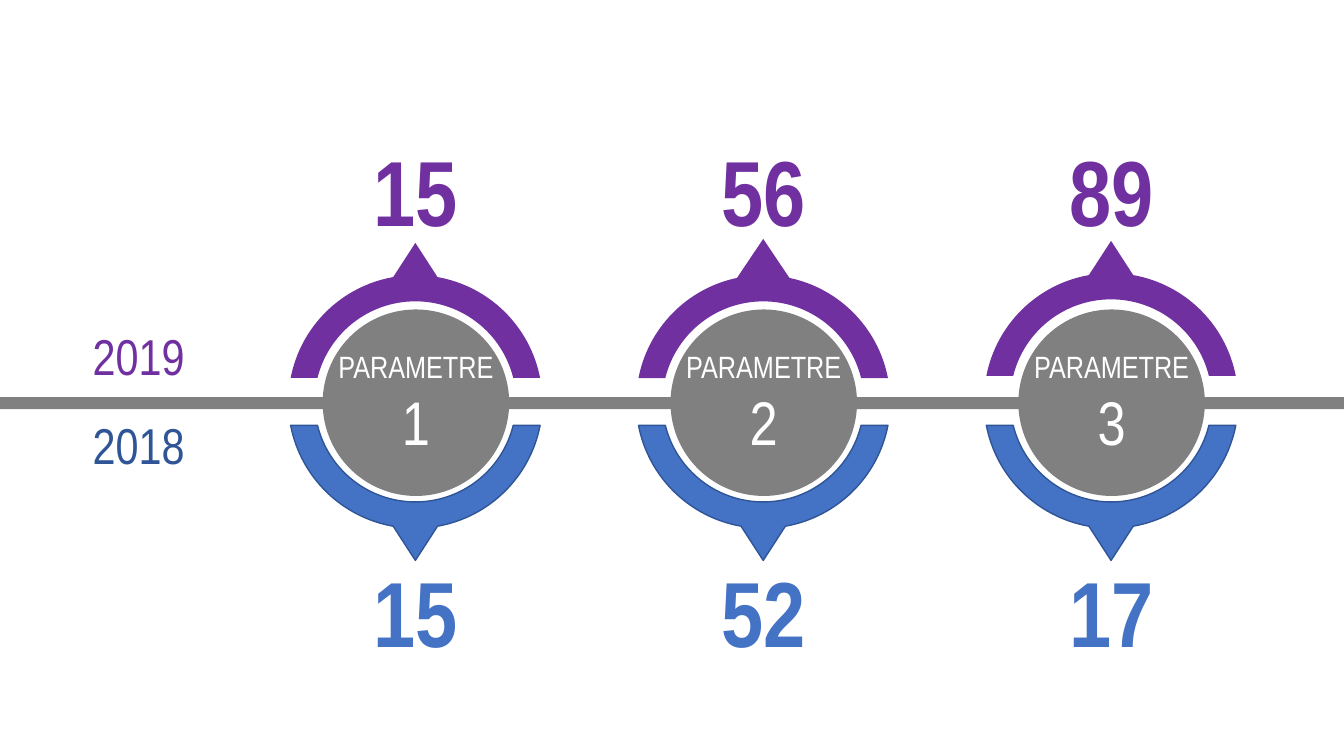
from dataclasses import dataclass
from math import acos, asin, cos, pi, sin, tan

from lxml.etree import SubElement
from pptx import Presentation
from pptx.dml.color import RGBColor
from pptx.enum.shapes import MSO_SHAPE as Shape
from pptx.enum.text import MSO_ANCHOR as Anchor, MSO_AUTO_SIZE as AutoSize, PP_ALIGN as Align
from pptx.oxml.ns import qn
from pptx.util import Inches, Pt


@dataclass(frozen=True)
class Theme:
    font = "Arial Narrow"
    purple = RGBColor.from_string("7030A0")
    blue = RGBColor.from_string("4472C4")
    dark_blue = RGBColor.from_string("2F5597")
    gray = RGBColor.from_string("808080")
    white = RGBColor.from_string("FFFFFF")
    label_size = Pt(22)
    year_size = Pt(36)
    index_size = Pt(44)
    value_size = Pt(66)


theme = Theme()


def add_run(paragraph, text, size, color, bold=None):
    run = paragraph.add_run()
    run.text = text
    run.font.name = theme.font
    run.font.size = size
    run.font.bold = bold
    run.font.color.rgb = color


def style_shape(shape, fill, line=None):
    shape.shadow.inherit = False
    shape.fill.solid()
    shape.fill.fore_color.rgb = fill
    if line is None:
        shape.line.fill.background()
    else:
        shape.line.color.rgb = line
        shape.line.width = Pt(1)


presentation = Presentation()
presentation.slide_width = Inches(13.33)
presentation.slide_height = Inches(7.5)
slide = presentation.slides.add_slide(presentation.slide_layouts[6])
shapes = slide.shapes

axis_bar = shapes.add_shape(Shape.RECTANGLE, Inches(-0.03), Inches(3.94), Inches(13.36), Inches(0.12))
style_shape(axis_bar, theme.gray)

for year, top, color in [("2019", 3.18, theme.purple), ("2018", 4.06, theme.dark_blue)]:
    year_box = shapes.add_textbox(Inches(0.82), Inches(top), Inches(1.12), Inches(0.71))
    year_box.text_frame.word_wrap = False
    year_box.text_frame.auto_size = AutoSize.SHAPE_TO_FIT_TEXT
    add_run(year_box.text_frame.paragraphs[0], year, theme.year_size, color)

first_center, pitch = 4.12, 3.45
outer_radius, inner_radius, edge_offset = 1.26, 1.0, 0.24
curve_starts = (2, 6, 9, 13)
parameters = [
    ("1", "15", "15", 3.99, 1.58, 0.22),
    ("2", "56", "52", 3.99, 1.62, 0.26),
    ("3", "89", "17", 3.97, 1.58, 0.22),
]

for column, (index, value_2019, value_2018, upper_center, upper_tip, upper_neck) in enumerate(parameters):
    center_x = first_center + column * pitch
    halves = [
        (1, 3.98, 1.58, 0.22, theme.blue, theme.dark_blue, value_2018, 5.45),
        (-1, upper_center, upper_tip, upper_neck, theme.purple, None, value_2019, 1.28),
    ]
    for direction, center_y, tip, neck, fill, line, value, value_top in halves:
        right_side = [(0, tip)]
        arcs = [
            (outer_radius, acos(neck / outer_radius), asin(edge_offset / outer_radius)),
            (inner_radius, asin(edge_offset / inner_radius), pi / 2),
        ]
        for radius, start, end in arcs:
            handle = 4 / 3 * tan((end - start) / 4)
            right_side += [
                (radius * (cos(angle) - pull * sin(angle)), radius * (sin(angle) + pull * cos(angle)))
                for angle, pull in [(start, 0), (start, handle), (end, -handle), (end, 0)]
            ]
        left_side = [(-x, y) for x, y in reversed(right_side[1:-1])]
        outline = [
            (Inches(center_x + x), Inches(center_y + direction * y))
            for x, y in right_side + left_side
        ]
        builder = shapes.build_freeform(*outline[0])
        builder.add_line_segments(outline[1:], close=True)
        half_ring = builder.convert_to_shape()
        style_shape(half_ring, fill, line)
        segments = list(half_ring.element.iter(qn("a:lnTo")))
        for start in curve_starts:
            curve = SubElement(segments[0].getparent(), qn("a:cubicBezTo"))
            segments[start - 1].addprevious(curve)
            for segment in segments[start - 1:start + 2]:
                curve.append(segment[0])
                segment.getparent().remove(segment)

        value_box = shapes.add_textbox(Inches(center_x - 0.52), Inches(value_top), Inches(1.05), Inches(1.21))
        frame = value_box.text_frame
        frame.word_wrap = False
        frame.auto_size = AutoSize.SHAPE_TO_FIT_TEXT
        frame.vertical_anchor = Anchor.MIDDLE
        frame.paragraphs[0].alignment = Align.CENTER
        add_run(frame.paragraphs[0], value, theme.value_size, fill, bold=True)

    circle = shapes.add_shape(Shape.OVAL, Inches(center_x - 0.92), Inches(3.07), Inches(1.85), Inches(1.85))
    style_shape(circle, theme.gray)
    frame = circle.text_frame
    frame.word_wrap = False
    frame.vertical_anchor = Anchor.MIDDLE
    label, number = frame.paragraphs[0], frame.add_paragraph()
    for paragraph, text, size in [
        (label, "PARAMETRE", theme.label_size),
        (number, index, theme.index_size),
    ]:
        paragraph.alignment = Align.CENTER
        add_run(paragraph, text, size, theme.white)

presentation.save("out.pptx")
